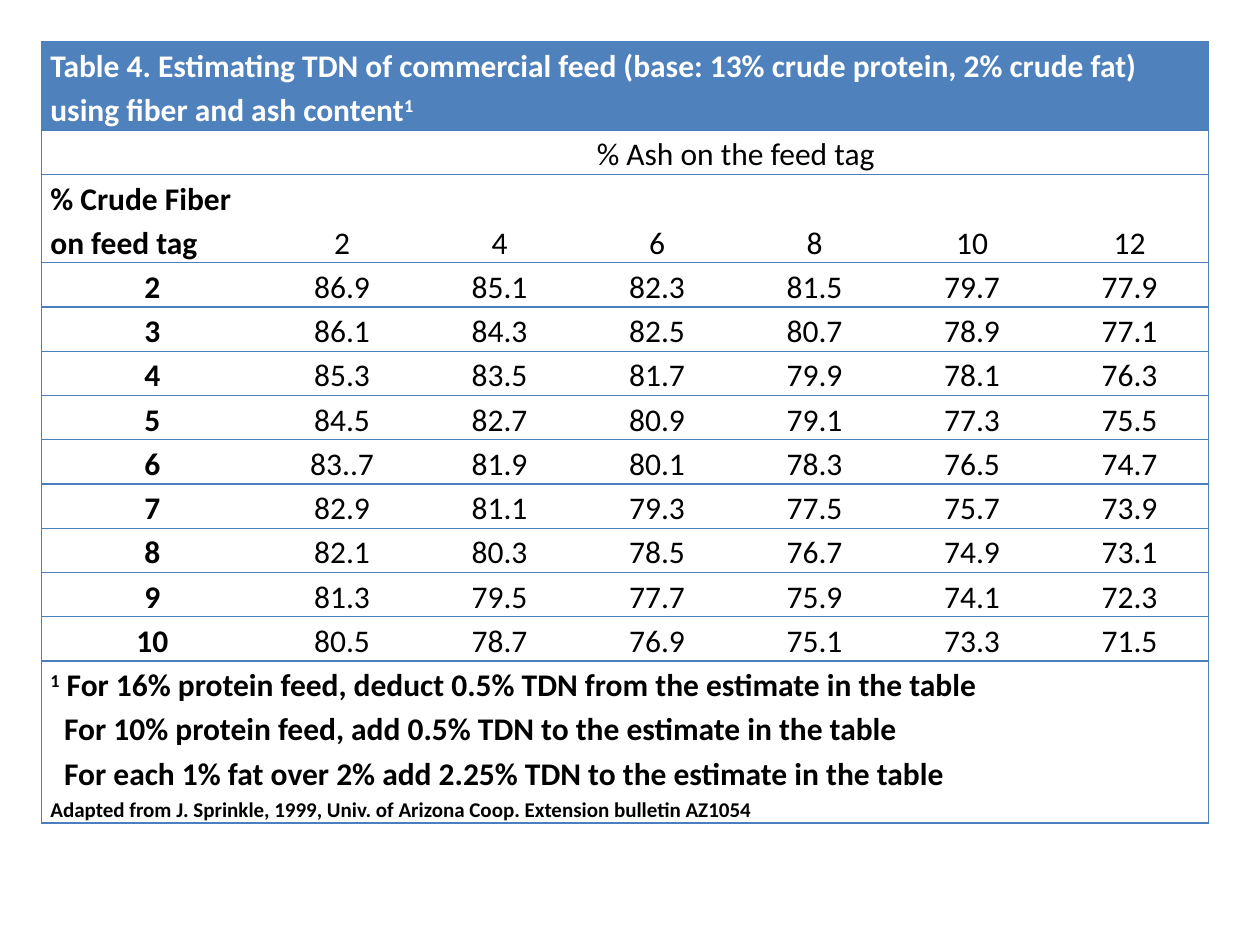
from dataclasses import dataclass

from lxml.etree import SubElement
from pptx import Presentation
from pptx.dml.color import RGBColor
from pptx.enum.text import MSO_ANCHOR, PP_ALIGN
from pptx.oxml.ns import qn
from pptx.table import Table, _Cell
from pptx.util import Inches, Pt

BLACK, WHITE = "000000", "FFFFFF"
HEADER_BLUE, LINE_BLUE = "4F81BD", "4B7EBC"
NO_GRID_STYLE = "{2D5ABB26-0587-4C30-8999-92F81FD0307C}"

COLUMN_WIDTHS = [1.76] + [1.25] * 6
ROW_HEIGHTS = [0.63, 0.3, 0.63] + [0.3] * 9 + [1.22]
LAST_ROW, LAST_COLUMN = len(ROW_HEIGHTS) - 1, len(COLUMN_WIDTHS) - 1

ASH_LEVELS = ["2", "4", "6", "8", "10", "12"]
TDN_BY_FIBER = {
    "2": ["86.9", "85.1", "82.3", "81.5", "79.7", "77.9"],
    "3": ["86.1", "84.3", "82.5", "80.7", "78.9", "77.1"],
    "4": ["85.3", "83.5", "81.7", "79.9", "78.1", "76.3"],
    "5": ["84.5", "82.7", "80.9", "79.1", "77.3", "75.5"],
    "6": ["83..7", "81.9", "80.1", "78.3", "76.5", "74.7"],
    "7": ["82.9", "81.1", "79.3", "77.5", "75.7", "73.9"],
    "8": ["82.1", "80.3", "78.5", "76.7", "74.9", "73.1"],
    "9": ["81.3", "79.5", "77.7", "75.9", "74.1", "72.3"],
    "10": ["80.5", "78.7", "76.9", "75.1", "73.3", "71.5"],
}


@dataclass
class Span:
    text: str
    bold: bool = False
    size: int = 18
    color: str = BLACK
    raised: bool = False


@dataclass
class Line:
    spans: list[Span]
    align: PP_ALIGN = PP_ALIGN.LEFT
    indent: float = 0


def rgb(value: str) -> RGBColor:
    return RGBColor.from_string(value)


def write(cell: _Cell, lines: list[Line]) -> None:
    frame = cell.text_frame
    for index, line in enumerate(lines):
        para = frame.add_paragraph() if index else frame.paragraphs[0]
        para.alignment, para.line_spacing = line.align, 1.15
        if line.indent:
            para._p.get_or_add_pPr().set("marL", str(Inches(line.indent)))
        for span in line.spans:
            run = para.add_run()
            run.text = span.text
            formats = {"name": "Calibri", "size": Pt(span.size), "bold": span.bold}
            for name, value in formats.items():
                setattr(run.font, name, value)
            run.font.color.rgb = rgb(span.color)
            if span.raised:
                run.font._element.set("baseline", "30000")


def centre(cell: _Cell, text: str, bold: bool = False) -> None:
    write(cell, [Line([Span(text, bold)], PP_ALIGN.CENTER)])


def draw_borders(cell: _Cell, sides: dict[str, bool]) -> None:
    properties = cell._tc.get_or_add_tcPr()
    for side, visible in sides.items():
        line = SubElement(properties, qn(f"a:ln{side}"), w=str(Pt(0.75)))
        if visible:
            fill = SubElement(line, qn("a:solidFill"))
            SubElement(fill, qn("a:srgbClr"), val=LINE_BLUE)
        else:
            SubElement(line, qn("a:noFill"))


def style_cells(table: Table) -> None:
    margins = {"margin_left": 0.07, "margin_right": 0.07, "margin_top": 0, "margin_bottom": 0}
    for row in range(LAST_ROW + 1):
        for column in range(LAST_COLUMN + 1):
            cell = table.cell(row, column)
            for name, value in margins.items():
                setattr(cell, name, Inches(value))
            end = column + (cell.span_width if cell.is_merge_origin else 1)
            draw_borders(cell, {"L": column == 0, "R": end > LAST_COLUMN, "T": True, "B": True})
            if row == 0:
                cell.fill.solid()
                cell.fill.fore_color.rgb = rgb(HEADER_BLUE)
            else:
                cell.fill.background()


def fill_table(table: Table) -> None:
    # Title and column headings
    title = ("Table 4. Estimating TDN of commercial feed (base: 13% crude protein, "
             "2% crude fat) using fiber and ash content")
    write(table.cell(0, 0), [Line([Span(title, True, color=WHITE),
                                   Span("1", True, color=WHITE, raised=True)])])
    centre(table.cell(1, 1), "% Ash on the feed tag")
    write(table.cell(2, 0), [Line([Span("% Crude Fiber on feed tag", True)])])
    for column, level in enumerate(ASH_LEVELS, start=1):
        cell = table.cell(2, column)
        centre(cell, level)
        cell.vertical_anchor = MSO_ANCHOR.BOTTOM

    # TDN values
    for row, (fiber, values) in enumerate(TDN_BY_FIBER.items(), start=3):
        centre(table.cell(row, 0), fiber, bold=True)
        for column, value in enumerate(values, start=1):
            centre(table.cell(row, column), value)

    # Footnotes
    write(table.cell(LAST_ROW, 0), [
        Line([Span("1", True, raised=True),
              Span(" For 16% protein feed, deduct 0.5% TDN from the estimate in the table", True)]),
        Line([Span("For 10% protein feed, add 0.5% TDN to the estimate in the table", True)],
             indent=0.11),
        Line([Span("For each 1% fat over 2% add 2.25% TDN to the estimate in the table", True)],
             indent=0.11),
        Line([Span("Adapted from J. Sprinkle, 1999, Univ. of Arizona Coop. Extension bulletin AZ1054",
                   True, size=12)]),
    ])


def main() -> None:
    deck = Presentation()
    deck.slide_width, deck.slide_height = Inches(10), Inches(7.5)
    page = deck.slides.add_slide(deck.slide_layouts[6])

    # Table grid
    table = page.shapes.add_table(
        len(ROW_HEIGHTS), len(COLUMN_WIDTHS),
        Inches(0.33), Inches(0.33), Inches(9.25), Inches(6.09)).table
    table.first_row = table.horz_banding = False
    table._tbl.tblPr.find(qn("a:tableStyleId")).text = NO_GRID_STYLE
    for column, width in zip(table.columns, COLUMN_WIDTHS):
        column.width = Inches(width)
    for row, height in zip(table.rows, ROW_HEIGHTS):
        row.height = Inches(height)
    for row, first in [(0, 0), (1, 1), (LAST_ROW, 0)]:
        table.cell(row, first).merge(table.cell(row, LAST_COLUMN))

    fill_table(table)
    style_cells(table)
    deck.save("out.pptx")


if __name__ == "__main__":
    main()
